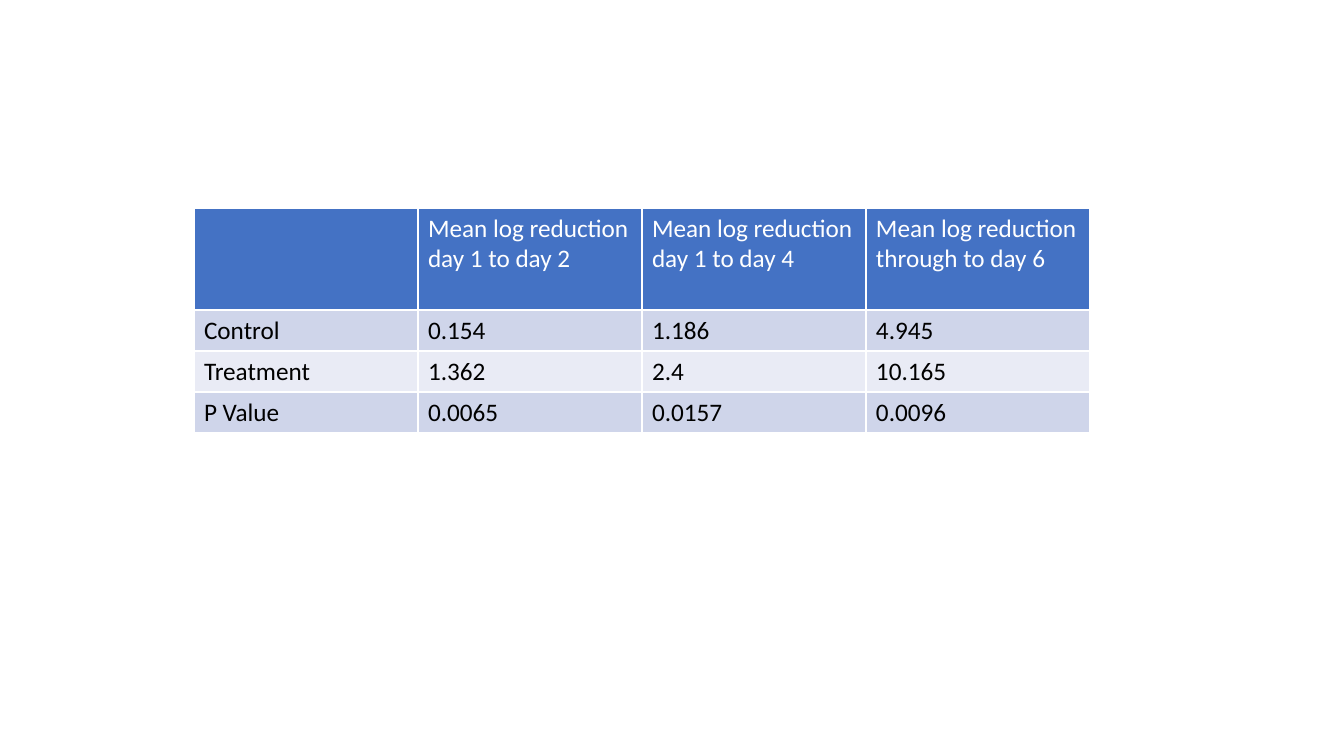
import pptx
import pptx.util
import pptx.dml.color

PX = 914400 / 100.8
COLORS = {
    "head": "4472C4",
    "odd": "CFD5EA",
    "even": "E9EBF5",
    "white": "FFFFFF",
    "black": "000000",
}
ROWS = [
    ["", "Mean log reduction day 1 to day 2",
     "Mean log reduction day 1 to day 4",
     "Mean log reduction through to day 6"],
    ["Control", "0.154", "1.186", "4.945"],
    ["Treatment", "1.362", "2.4", "10.165"],
    ["P Value", "0.0065", "0.0157", "0.0096"],
]
LEFT, TOP = 194, 208
COL = 224
HEAD, BODY = 102, 41


def px(n):
    return pptx.util.Emu(round(n * PX))


def color(name):
    return pptx.dml.color.RGBColor.from_string(COLORS[name])


deck = pptx.Presentation()
deck.slide_width, deck.slide_height = px(1344), px(756)
slide = deck.slides.add_slide(deck.slide_layouts[6])

# The default table style draws the white grid lines.
heights = [HEAD] + [BODY] * (len(ROWS) - 1)
table = slide.shapes.add_table(
    len(ROWS), len(ROWS[0]), px(LEFT), px(TOP),
    px(COL * len(ROWS[0])), px(sum(heights))).table
for col in table.columns:
    col.width = px(COL)

for r, texts in enumerate(ROWS):
    table.rows[r].height = px(heights[r])
    fill = "head" if r == 0 else "odd" if r % 2 else "even"
    for c, text in enumerate(texts):
        cell = table.cell(r, c)
        cell.fill.solid()
        cell.fill.fore_color.rgb = color(fill)
        cell.text_frame.text = text
        for run in cell.text_frame.paragraphs[0].runs:
            run.font.name = "Calibri"
            run.font.size = pptx.util.Pt(18)
            run.font.bold = False
            run.font.color.rgb = color("black" if r else "white")

deck.save("out.pptx")
